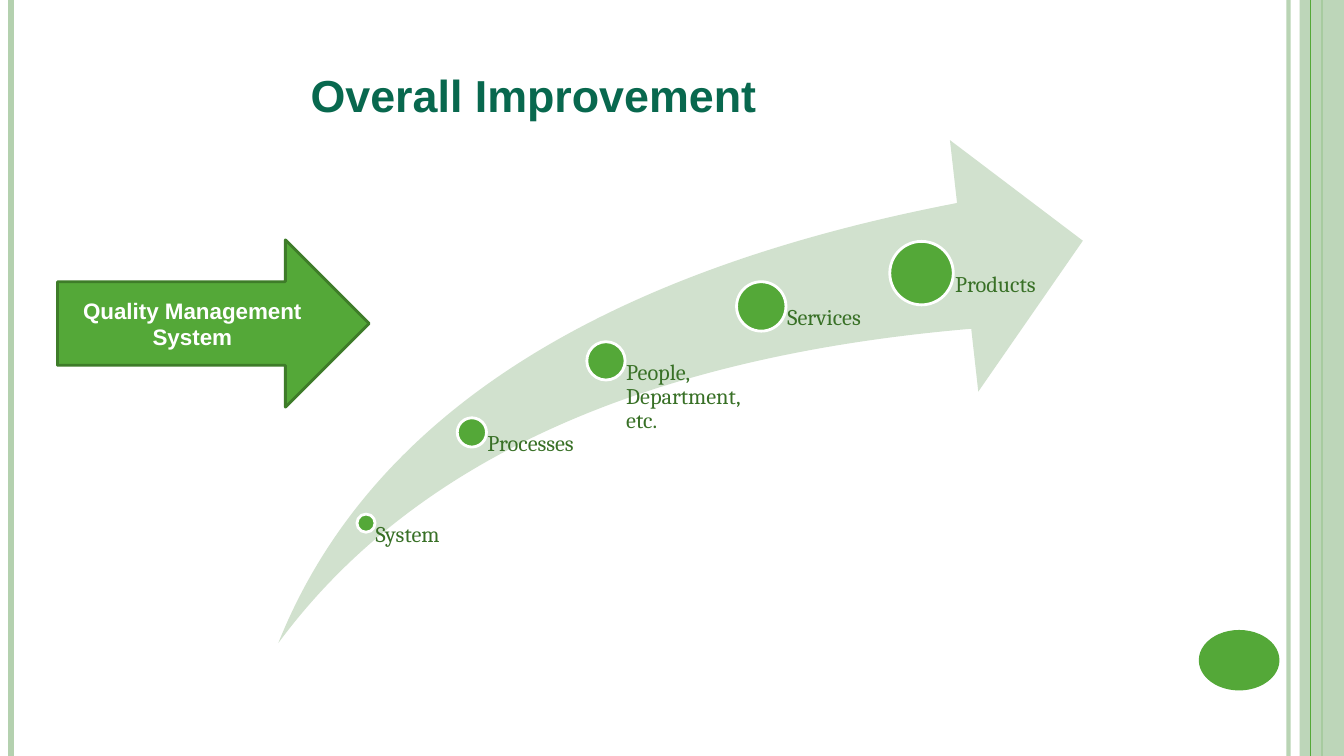
from lxml import etree
from pptx import Presentation
from pptx.dml.color import RGBColor
from pptx.enum.shapes import MSO_CONNECTOR, MSO_SHAPE
from pptx.enum.text import MSO_ANCHOR, MSO_AUTO_SIZE, PP_ALIGN
from pptx.oxml.ns import qn
from pptx.util import Inches, Pt

STRAIGHT = MSO_CONNECTOR.STRAIGHT
RECT, OVAL = MSO_SHAPE.RECTANGLE, MSO_SHAPE.OVAL
SWOOSH, RIGHT_ARROW = MSO_SHAPE.SWOOSH_ARROW, MSO_SHAPE.RIGHT_ARROW
TOP, MIDDLE = MSO_ANCHOR.TOP, MSO_ANCHOR.MIDDLE
LEFT, CENTER = PP_ALIGN.LEFT, PP_ALIGN.CENTER
NO_FIT = MSO_AUTO_SIZE.NONE

WHITE = RGBColor(0xFF, 0xFF, 0xFF)
GREEN = RGBColor(0x54, 0xA8, 0x38)
DARK_GREEN = RGBColor(0x3E, 0x7C, 0x29)
LABEL_GREEN = RGBColor(0x38, 0x70, 0x26)
TITLE_GREEN = RGBColor(0x08, 0x68, 0x4E)
SOFT_GREEN = RGBColor(0xB4, 0xD1, 0xAF)
PALE_GREEN = RGBColor(0xD1, 0xE1, 0xCE)

WIDTH, HEIGHT = 13.33, 7.5
SWOOSH_BOTTOM = 6.38

# label, circle centre x and y, diameter, label width
STAGES = [
    ("System", 3.63, 5.19, 0.18, 1.05),
    ("Processes", 4.68, 4.29, 0.29, 1.33),
    ("People, Department, etc.", 6.01, 3.58, 0.38, 1.54),
    ("Services", 7.55, 3.04, 0.49, 1.6),
    ("Products", 9.14, 2.71, 0.63, 1.6),
]


def set_opacity(element, percent):
    color = element.find(".//" + qn("a:srgbClr"))
    etree.SubElement(color, qn("a:alpha"), val=str(percent * 1000))


class SlideBuilder:
    def __init__(self, slide):
        self.slide = slide
        self.shapes = slide.shapes

    def style(self, tf, text, size, font, color, bold=False, align=LEFT):
        tf.text = text
        p = tf.paragraphs[0]
        p.alignment = align
        f = p.runs[0].font
        f.size, f.name, f.bold = Pt(size), font, bold
        f.color.rgb = color
        return p

    def inset(self, tf, left=0):
        tf.margin_left = Inches(left)
        tf.margin_top = tf.margin_right = tf.margin_bottom = 0
        tf.vertical_anchor = TOP
        tf.auto_size = NO_FIT

    def title(self, text, x, y, w, h):
        sp = self.shapes.title
        sp.left, sp.top, sp.width, sp.height = map(Inches, (x, y, w, h))
        tf = sp.text_frame
        self.inset(tf)
        tf.word_wrap = False
        p = self.style(tf, text, 32, "Arial", TITLE_GREEN, bold=True)
        p.line_spacing = Pt(27.6)
        p.space_before = Pt(0)

    def shape(self, kind, x, y, w, h, fill, line=None, opacity=100):
        sp = self.shapes.add_shape(kind, *map(Inches, (x, y, w, h)))
        sp.shadow.inherit = False
        sp.fill.solid()
        sp.fill.fore_color.rgb = fill
        if opacity < 100:
            set_opacity(sp.fill._xPr, opacity)
        if line is None:
            sp.line.fill.background()
        else:
            sp.line.color.rgb = line
            sp.line.width = Pt(2)
        return sp

    def stripe(self, x, color, width, opacity=100):
        """Draw a vertical line over the full slide height."""
        line = self.shapes.add_connector(
            STRAIGHT, Inches(x), 0, Inches(x), Inches(HEIGHT))
        line.line.color.rgb = color
        line.line.width = Pt(width)
        props = line._element.spPr
        if opacity < 100:
            set_opacity(props, opacity)
        etree.SubElement(props, qn("a:effectLst"))

    def stage(self, text, cx, cy, size, label_width):
        """Draw a circle and a label that hangs from its centre."""
        self.shape(OVAL, cx - size / 2, cy - size / 2, size, size, GREEN, WHITE)
        box = self.shapes.add_textbox(*map(
            Inches, (cx, cy, label_width, SWOOSH_BOTTOM - cy)))
        tf = box.text_frame
        self.inset(tf, size * 0.53)
        tf.word_wrap = True
        p = self.style(tf, text, 16, "Cambria", LABEL_GREEN)
        p.line_spacing = 0.9


def main():
    prs = Presentation()
    prs.slide_width, prs.slide_height = Inches(WIDTH), Inches(HEIGHT)
    s = SlideBuilder(prs.slides.add_slide(prs.slide_layouts[5]))

    s.stripe(12.78, SOFT_GREEN, 3, opacity=93)
    s.stripe(0.11, SOFT_GREEN, 4.5)
    s.stripe(13.11, GREEN, 1.5)
    s.shape(RECT, 12.89, 0, 0.44, HEIGHT, SOFT_GREEN, opacity=87)
    s.stripe(13, GREEN, 0.75)
    s.shape(OVAL, 11.89, 6.25, 0.8, 0.6, GREEN)

    s.title("Overall Improvement", 3.08, 0.82, 4.46, 0.4)

    swoosh = s.shape(SWOOSH, 2.76, 1.39, 7.98, 4.99, PALE_GREEN)
    swoosh.adjustments[0] = swoosh.adjustments[1] = 0.25
    for stage in STAGES:
        s.stage(*stage)

    arrow = s.shape(RIGHT_ARROW, 0.57, 2.38, 3.09, 1.66, GREEN, DARK_GREEN)
    tf = arrow.text_frame
    tf.word_wrap = True
    tf.vertical_anchor = MIDDLE
    s.style(tf, "Quality Management System", 16, "Arial", WHITE,
            bold=True, align=CENTER)

    prs.save("out.pptx")


if __name__ == "__main__":
    main()
